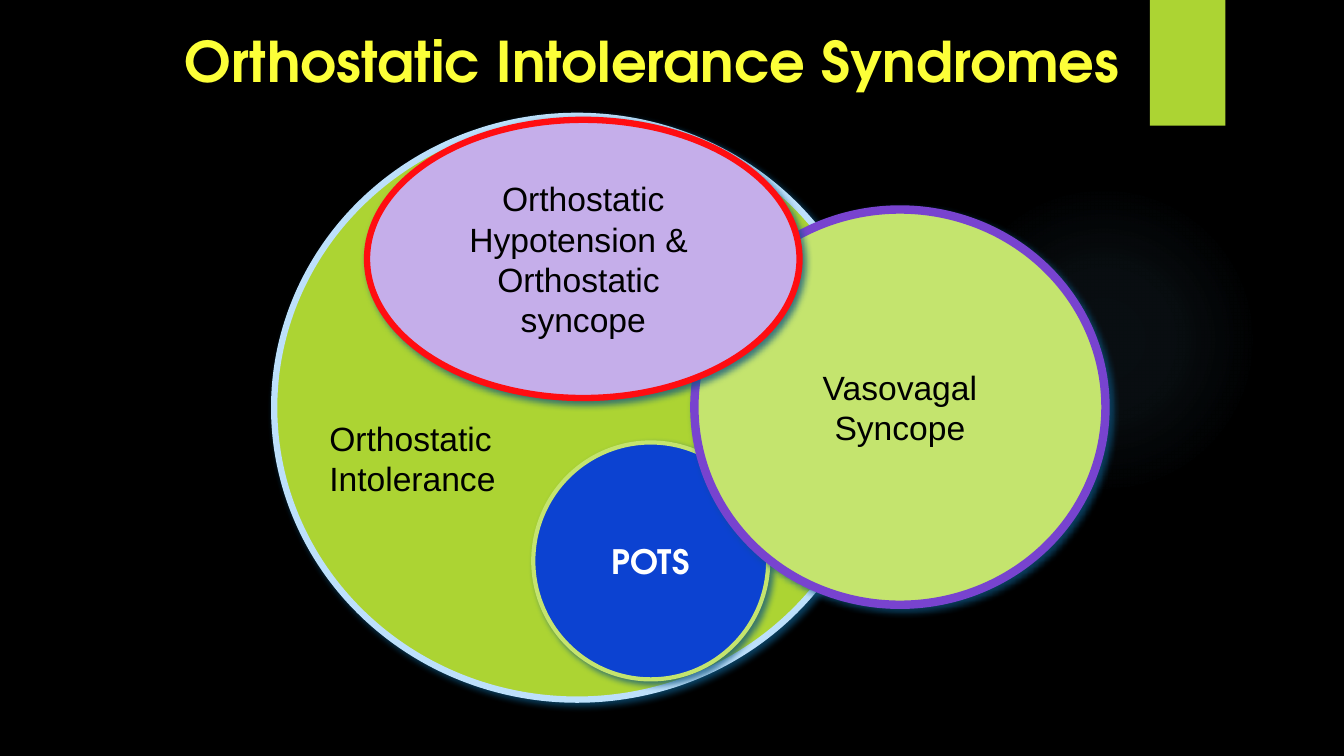
from lxml import etree
from pptx import Presentation
from pptx.dml.color import RGBColor
from pptx.enum import shapes, text
from pptx.oxml import ns
from pptx.util import Cm, Pt

HEADING = "TeX Gyre Adventor"
BODY = "Arial"
SLIDE_SIZE = (33.87, 19.05)

TITLE = ("Orthostatic Intolerance Syndromes", (4.17, 0.53, 24.51, 3.12))
GLOW = ((23.9, 4.65, 7.82, 7.82), "7AC4F0", [(0, 7), (36, 6), (69, 0)])
RIBBON = ((28.98, 0, 1.9, 3.17), "ACD433")
SYNDROMES = [
    dict(box=(6.91, 2.92, 15.27, 14.71), fill="ACD433", outline=("BDE0FB", 4.5),
         lines=[], font=(BODY, "000000", False)),
    dict(box=(13.44, 11.15, 5.92, 5.97), fill="0C42D1", outline=("C4E46E", 3),
         lines=["POTS"], font=(HEADING, "FFFFFF", True)),
    dict(box=(17.5, 5.28, 10.36, 9.96), fill="C4E46E", outline=("7843CF", 6),
         lines=["Vasovagal", "Syncope"], font=(BODY, "000000", False)),
    dict(box=(9.25, 3.02, 10.9, 7.01), fill="C5AEEA", outline=("FF0D11", 4.5),
         lines=["Orthostatic", "Hypotension & ", "Orthostatic ", "syncope"],
         font=(BODY, "000000", False)),
]
INTOLERANCE = (["Orthostatic", "Intolerance"], (8.05, 10.41, 4.88, 3.33))
BLUE_SHADOW = ("0E5580", 75, 5, 3, 45)
DARK_SHADOW = ("000000", 45, 3, 2, 90)


def rgb(value):
    return RGBColor.from_string(value)


def lengths(box):
    return [Cm(side) for side in box]


def add_color(parent, color, alpha):
    node = etree.SubElement(parent, ns.qn("a:srgbClr"), val=color)
    etree.SubElement(node, ns.qn("a:alpha"), val=str(alpha * 1000))


def add_shadow(properties, color, alpha, blur, distance, angle):
    effects = properties.find(ns.qn("a:effectLst"))
    if effects is None:
        effects = etree.SubElement(properties, ns.qn("a:effectLst"))
    shadow = etree.SubElement(
        effects, ns.qn("a:outerShdw"), blurRad=str(Pt(blur)), dist=str(Pt(distance)),
        dir=str(angle * 60000), algn="ctr", rotWithShape="0")
    add_color(shadow, color, alpha)


def add_figure(slide, preset, box, fill=None, outline=None, shadow=None):
    figure = slide.shapes.add_shape(preset, *lengths(box))
    if fill:
        figure.fill.solid()
        figure.fill.fore_color.rgb = rgb(fill)
    if outline:
        figure.line.color.rgb = rgb(outline[0])
        figure.line.width = Pt(outline[1])
    else:
        figure.line.fill.background()
    figure.shadow.inherit = False
    if shadow:
        add_shadow(figure._element.spPr, *shadow)
    return figure


def write(frame, lines, font, alignment, size=24):
    family, color, bold = font
    frame.word_wrap = False
    for number, line in enumerate(lines):
        paragraph = frame.add_paragraph() if number else frame.paragraphs[0]
        paragraph.text = line
        paragraph.alignment = alignment
        paragraph.font.name = family
        paragraph.font.size = Pt(size)
        paragraph.font.bold = bold
        paragraph.font.color.rgb = rgb(color)


def add_title(slide):
    wording, box = TITLE
    title = slide.shapes.title
    title.left, title.top, title.width, title.height = lengths(box)
    frame = title.text_frame
    write(frame, [wording], (HEADING, "FCFF38", True), text.PP_ALIGN.CENTER, 40)
    frame.word_wrap = True
    frame.auto_size = text.MSO_AUTO_SIZE.NONE
    frame.vertical_anchor = text.MSO_ANCHOR.TOP
    add_shadow(frame.paragraphs[0].runs[0]._r.get_or_add_rPr(), *BLUE_SHADOW)


def add_glow(slide):
    box, color, stops = GLOW
    glow = add_figure(slide, shapes.MSO_SHAPE.OVAL, box)
    glow.fill.gradient()
    gradient = glow._element.spPr.find(ns.qn("a:gradFill"))
    for child in list(gradient):
        gradient.remove(child)
    stop_list = etree.SubElement(gradient, ns.qn("a:gsLst"))
    for position, alpha in stops:
        stop = etree.SubElement(stop_list, ns.qn("a:gs"), pos=str(position * 1000))
        add_color(stop, color, alpha)
    circle = etree.SubElement(gradient, ns.qn("a:path"), path="circle")
    etree.SubElement(circle, ns.qn("a:fillToRect"),
                     dict.fromkeys("ltrb", "50000"))


def main():
    deck = Presentation()
    deck.slide_width, deck.slide_height = lengths(SLIDE_SIZE)
    slide = deck.slides.add_slide(deck.slide_layouts[5])
    slide.background.fill.solid()
    slide.background.fill.fore_color.rgb = rgb("000000")

    add_glow(slide)
    add_figure(slide, shapes.MSO_SHAPE.RECTANGLE, *RIBBON, shadow=DARK_SHADOW)
    add_title(slide)
    for syndrome in SYNDROMES:
        oval = add_figure(slide, shapes.MSO_SHAPE.OVAL, syndrome["box"],
                          syndrome["fill"], syndrome["outline"], BLUE_SHADOW)
        oval.text_frame.vertical_anchor = text.MSO_ANCHOR.MIDDLE
        write(oval.text_frame, syndrome["lines"], syndrome["font"], text.PP_ALIGN.CENTER)

    lines, box = INTOLERANCE
    label = slide.shapes.add_textbox(*lengths(box))
    write(label.text_frame, lines, (BODY, "000000", False), text.PP_ALIGN.LEFT)
    deck.save("out.pptx")


if __name__ == "__main__":
    main()
